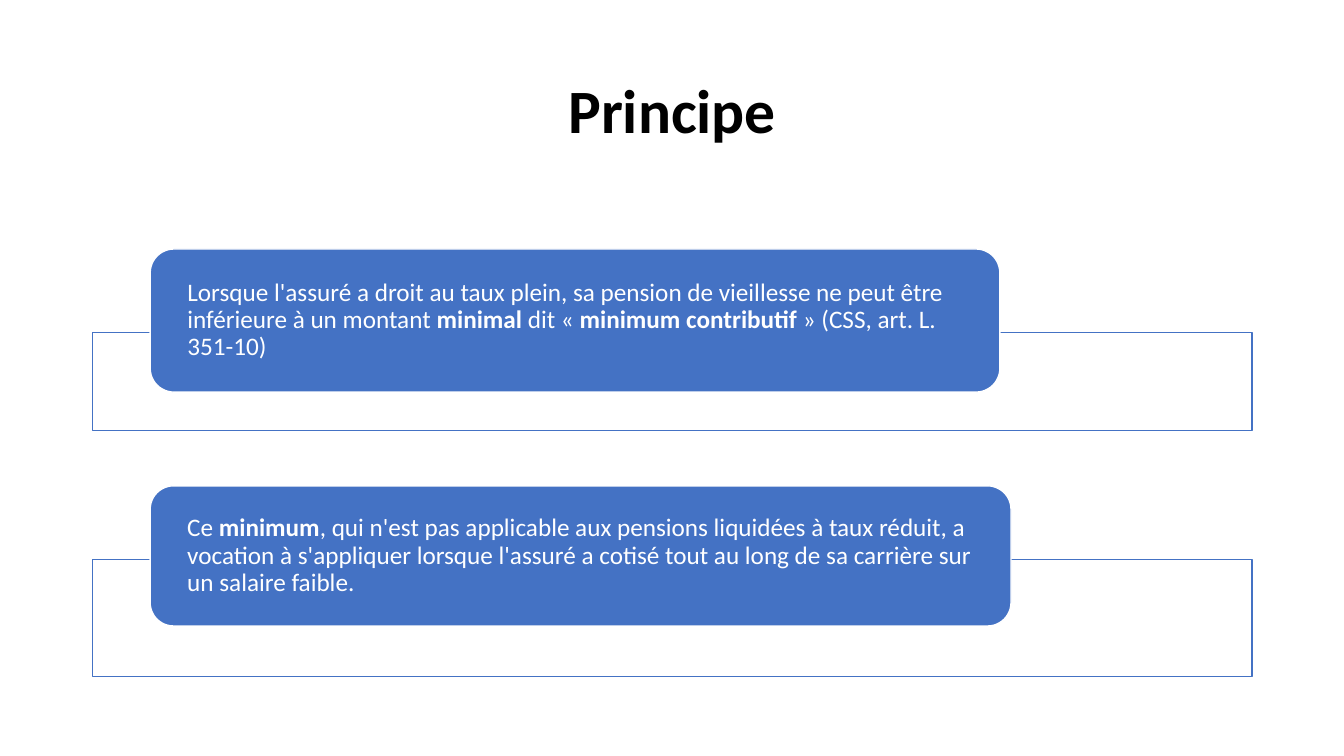
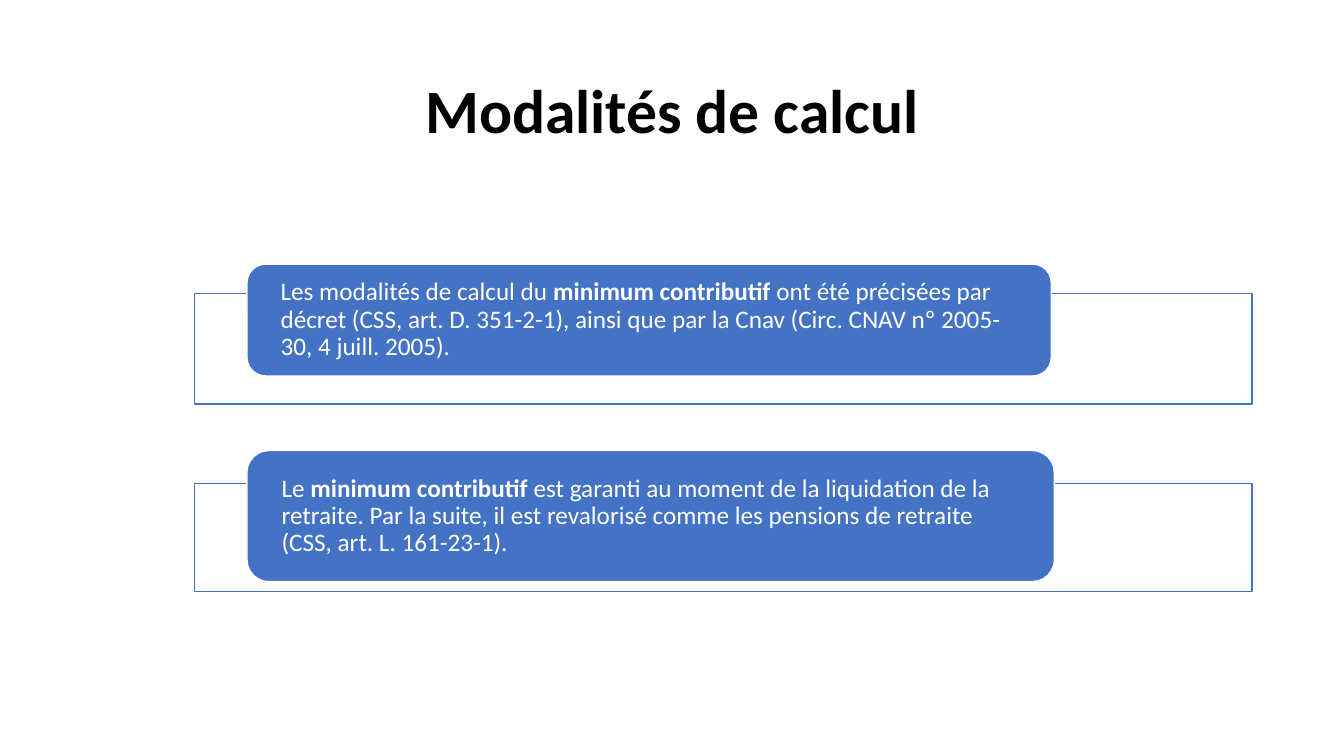
from pptx import Presentation
from pptx.dml.color import RGBColor
from pptx.enum.shapes import MSO_SHAPE as Shape
from pptx.enum.text import MSO_ANCHOR as Anchor, PP_ALIGN as Align
from pptx.util import Pt

COLORS = {"blue": "4472C4", "white": "FFFFFF", "black": "000000"}
FONT = "Calibri"
MARGIN = 66.24
CONTENT_WIDTH = 828
RIGHT_EDGE = MARGIN + CONTENT_WIDTH


def color(name):
    return RGBColor.from_string(COLORS[name])


def write(frame, text, *, size, ink, bold=False, align=Align.LEFT, inset=7.2):
    """Fill a text frame; **marked** words are bold."""
    frame.word_wrap = True
    frame.vertical_anchor = Anchor.MIDDLE
    frame.margin_left = frame.margin_right = Pt(inset)
    frame.margin_top = frame.margin_bottom = 0
    para = frame.paragraphs[0]
    para.alignment = align
    para.line_spacing = 0.9
    for index, words in enumerate(text.split("**")):
        span = para.add_run()
        span.text = words
        font = span.font
        font.name, font.size = FONT, Pt(size)
        font.bold = bold or index % 2 == 1
        font.color.rgb = color(ink)


class Deck:
    def __init__(self):
        self.file = Presentation()
        self.file.slide_width, self.file.slide_height = Pt(960), Pt(540)
        self.page = None

    def add_page(self, title):
        self.page = self.file.slides.add_slide(self.file.slide_layouts[6])
        box = self.page.shapes.add_textbox(
            Pt(MARGIN), Pt(28.8), Pt(CONTENT_WIDTH), Pt(104.4))
        write(box.text_frame, title, size=44, ink="black", bold=True,
              align=Align.CENTER)

    def add_block(self, kind, left, top, width, height, fill, line):
        block = self.page.shapes.add_shape(
            kind, Pt(left), Pt(top), Pt(width), Pt(height))
        block.shadow.inherit = False
        block.fill.solid()
        block.fill.fore_color.rgb = color(fill)
        block.line.color.rgb = color(line)
        block.line.width = Pt(1)
        return block

    def add_frame(self, left, top, height):
        """Outline that runs to the right edge of the content."""
        self.add_block(Shape.RECTANGLE, left, top, RIGHT_EDGE - left, height,
                       "white", "blue")

    def add_card(self, text, left, top, width, height, inset):
        card = self.add_block(Shape.ROUNDED_RECTANGLE, left, top, width, height,
                              "blue", "white")
        write(card.text_frame, text, size=18, ink="white", inset=inset)


# Each item: text, frame (top, height), card (top, width, height)
PAGES = [
    {"title": "Principe", "frame_left": MARGIN, "card_left": 107.28, "inset": 21.6,
     "items": [
         ("Lorsque l'assuré a droit au taux plein, sa pension de vieillesse ne peut "
          "être inférieure à un montant **minimal** dit « **minimum contributif** » "
          "(CSS, art. L. 351-10)",
          (237.6, 69.84), (177.84, 606.96, 102.24)),
         ("Ce **minimum**, qui n'est pas applicable aux pensions liquidées à taux "
          "réduit, a vocation à s'appliquer lorsque l'assuré a cotisé tout au long "
          "de sa carrière sur un salaire faible.",
          (399.6, 83.52), (347.04, 614.88, 100.08)),
     ]},
    {"title": "Modalités de calcul", "frame_left": 138.96, "card_left": 176.4,
     "inset": 20.16,
     "items": [
         ("Les modalités de calcul du **minimum contributif** ont été précisées par "
          "décret (CSS, art. D. 351-2-1), ainsi que par la Cnav (Circ. CNAV "
          "nº 2005-30, 4 juill. 2005).",
          (209.52, 79.2), (188.64, 574.56, 79.92)),
         ("Le **minimum contributif** est garanti au moment de la liquidation de la "
          "retraite. Par la suite, il est revalorisé comme les pensions de retraite "
          "(CSS, art. L. 161-23-1).",
          (345.6, 77.04), (321.84, 576.72, 93.6)),
     ]},
]


def main():
    deck = Deck()
    for content in PAGES:
        deck.add_page(content["title"])
        for text, frame, card in content["items"]:
            deck.add_frame(content["frame_left"], *frame)
            deck.add_card(text, content["card_left"], *card, content["inset"])
    deck.file.save("out.pptx")


if __name__ == "__main__":
    main()
